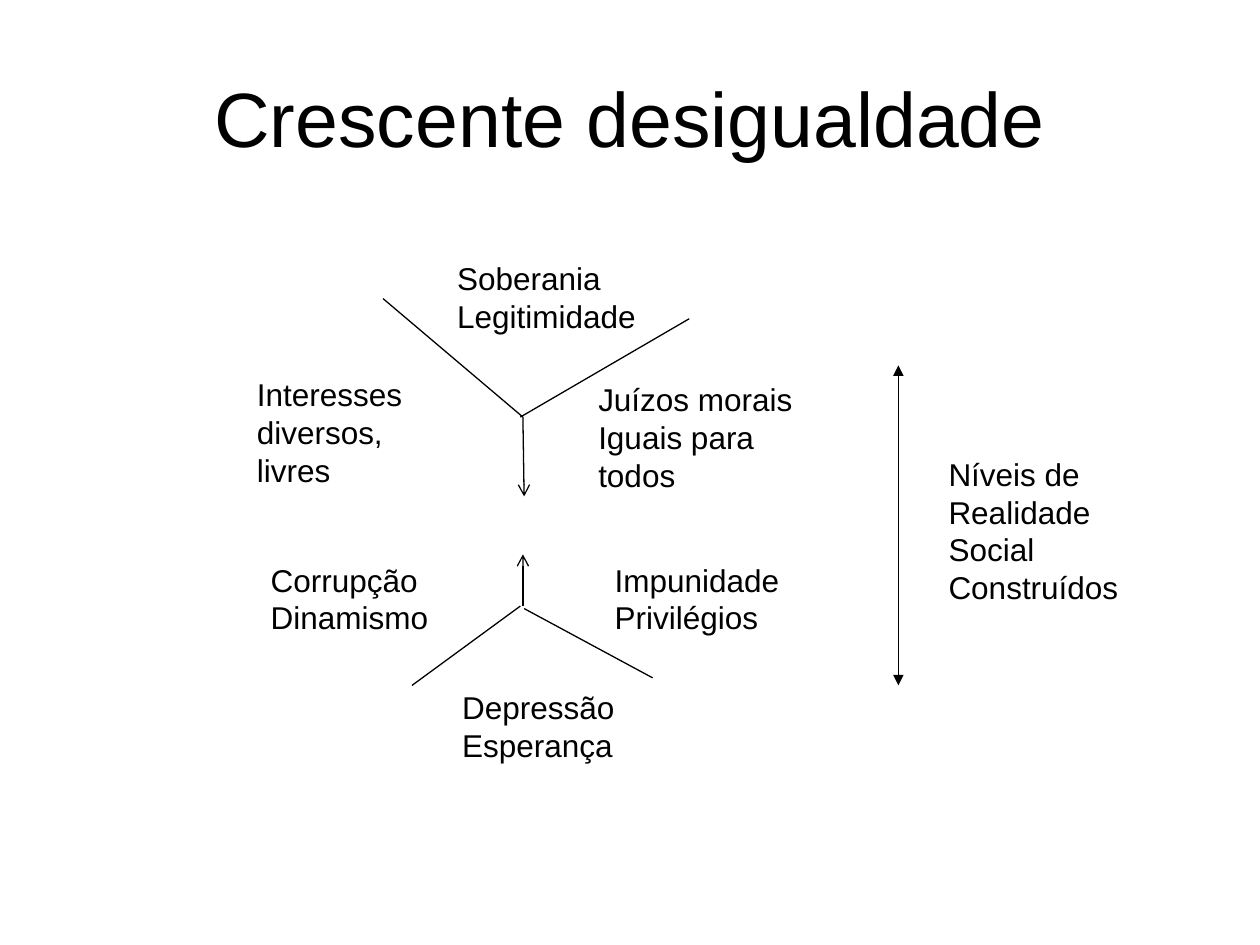
from dataclasses import dataclass
from lxml.etree import SubElement
from pptx import Presentation
from pptx.dml.color import RGBColor as Rgb
from pptx.enum.shapes import MSO_CONNECTOR as Conn
from pptx.enum.text import MSO_ANCHOR as Anchor, MSO_AUTO_SIZE as Fit, PP_ALIGN as Align
from pptx.oxml.ns import qn
from pptx.util import Inches, Pt


@dataclass(frozen=True)
class Theme:
    face: str = "Arial"
    ink: Rgb = Rgb(0, 0, 0)
    paper: Rgb = Rgb(255, 255, 255)
    head: int = 44
    body: int = 18
    rule: float = 0.75


THEME = Theme()
CELL = 0.1

LABELS = [
    (35.3, 20.1, 17, 7.1, False, "Soberania\nLegitimidade"),
    (19.4, 29.3, 13.7, 10.1, False, "Interesses\ndiversos,\nlivres"),
    (46.5, 29.7, 20.6, 10.1, True, "Juízos morais\nIguais para todos"),
    (20.5, 44, 15.2, 7.1, True, "Corrupção\nDinamismo"),
    (47.8, 44, 16.3, 7.1, True, "Impunidade\nPrivilégios"),
    (35.7, 54.1, 15.5, 7.1, False, "Depressão\nEsperança"),
    (74.3, 35.6, 15.6, 13.1, False, "Níveis de\nRealidade\nSocial\nConstruídos"),
]

LINES = [
    (30.4, 23.7, 41.5, 33.1, {}),
    (41.3, 33.1, 54.7, 25.3, {}),
    (41.3, 48.1, 32.7, 54.4, {}),
    (41.6, 48.3, 51.8, 53.8, {}),
    (41.5, 33.1, 41.6, 39.4, {"tailEnd": "arrow"}),
    (41.5, 48.1, 41.5, 44, {"tailEnd": "arrow"}),
    (71.3, 29, 71.3, 54.4, {"headEnd": "triangle", "tailEnd": "triangle"}),
]


def grid(*cells):
    return [Inches(round(cell * CELL, 2)) for cell in cells]


def style(par, size, align):
    par.alignment = align
    font = par.font
    font.name, font.size = THEME.face, Pt(size)
    font.color.rgb = THEME.ink


def title(slide, text):
    shape = slide.shapes.title
    shape.left, shape.top, shape.width, shape.height = grid(5, 3, 90, 12.5)
    frame = shape.text_frame
    frame.text = text
    frame.vertical_anchor = Anchor.MIDDLE
    style(frame.paragraphs[0], THEME.head, Align.CENTER)


def label(slide, col, row, wide, high, wrap, text):
    frame = slide.shapes.add_textbox(*grid(col, row, wide, high)).text_frame
    frame.text = text
    frame.word_wrap = wrap
    frame.auto_size = Fit.SHAPE_TO_FIT_TEXT
    for par in frame.paragraphs:
        style(par, THEME.body, Align.LEFT)


def line(slide, col, row, to_col, to_row, tips):
    link = slide.shapes.add_connector(Conn.STRAIGHT, *grid(col, row, to_col, to_row))
    link.line.color.rgb = THEME.ink
    link.line.width = Pt(THEME.rule)
    stroke = link.line._get_or_add_ln()
    for end, kind in tips.items():
        SubElement(stroke, qn(f"a:{end}"), type=kind)
    SubElement(link._element.spPr, qn("a:effectLst"))


def main():
    deck = Presentation()
    deck.slide_width, deck.slide_height = grid(100, 75)
    slide = deck.slides.add_slide(deck.slide_layouts[5])
    fill = slide.background.fill
    fill.solid()
    fill.fore_color.rgb = THEME.paper
    title(slide, "Crescente desigualdade")
    for spec in LINES:
        line(slide, *spec)
    for spec in LABELS:
        label(slide, *spec)
    deck.save("out.pptx")


if __name__ == "__main__":
    main()
